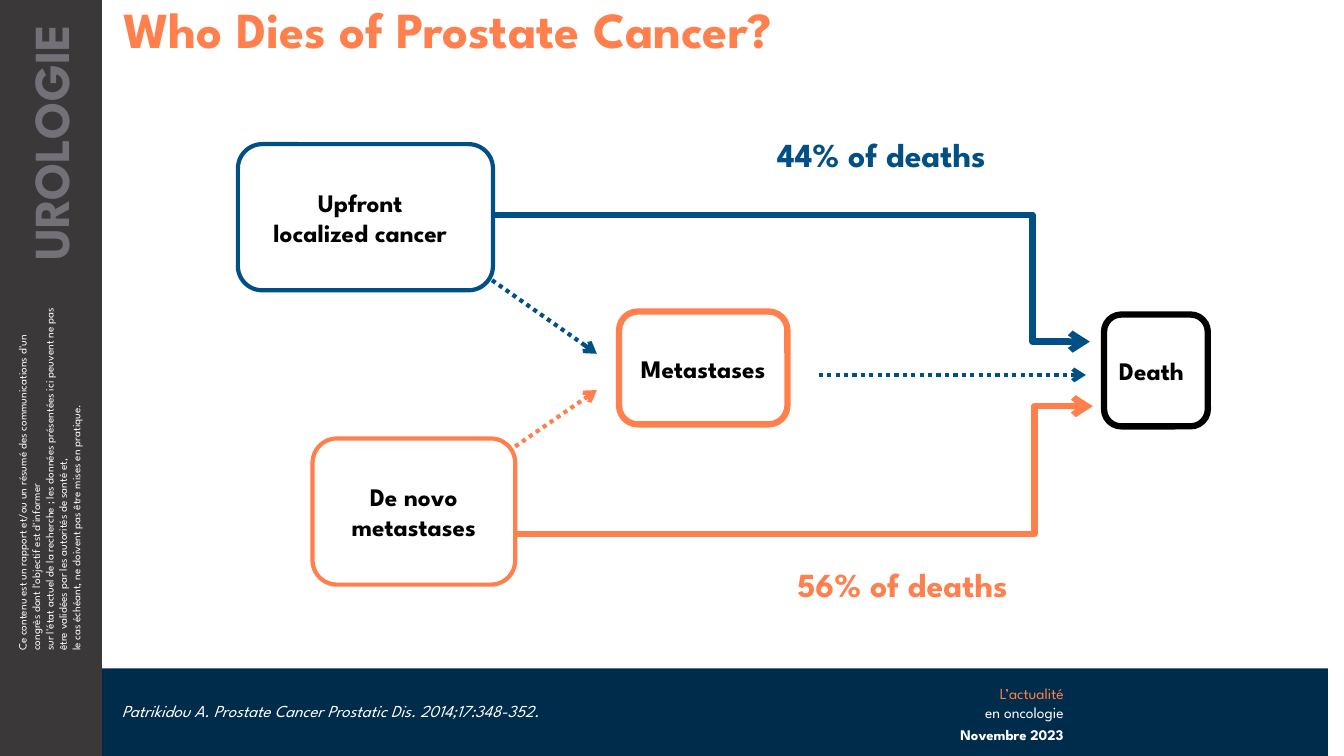
from lxml import etree
from pptx import Presentation
from pptx import util as u
from pptx.dml.color import RGBColor
from pptx.enum import dml, shapes, text
from pptx.oxml.ns import qn

NAVY, SLATE, BLUE, ORANGE = "002C4C", "3A3839", "005086", "FF7F4D"
WHITE, BLACK, GREY = "FFFFFF", "000000", "737078"
LEFT, CENTER, RIGHT = text.PP_ALIGN.LEFT, text.PP_ALIGN.CENTER, text.PP_ALIGN.RIGHT
TOP, MIDDLE = text.MSO_ANCHOR.TOP, text.MSO_ANCHOR.MIDDLE


def color(value):
    return RGBColor.from_string(value)


class Board:
    font = "League Spartan"
    cell = u.Inches(0.1)

    def __init__(self, slide):
        self.slide = slide

    def grid(self, *cells):
        return [round(c * self.cell) for c in cells]

    def wording(self, shape, lines, size, align=LEFT, anchor=TOP, insets=(1, 1), wrap=True,
                spacing=1.0, **style):
        frame = shape.text_frame
        left, right = self.grid(*insets)
        layout = {"word_wrap": wrap, "vertical_anchor": anchor, "margin_left": left,
                  "margin_right": right, "auto_size": text.MSO_AUTO_SIZE.NONE}
        for name, value in layout.items():
            setattr(frame, name, value)
        for i, (words, ink) in enumerate(lines):
            paragraph = frame.paragraphs[0] if i == 0 else frame.add_paragraph()
            paragraph.alignment = align
            paragraph.line_spacing = spacing
            run = paragraph.add_run()
            run.text = words
            for name, value in {"name": self.font, "size": u.Pt(size), **style}.items():
                setattr(run.font, name, value)
            run.font.color.rgb = color(ink)

    def label(self, at, lines, size, turn=0, **style):
        box = self.slide.shapes.add_textbox(*self.grid(*at))
        box.rotation = turn
        self.wording(box, lines, size, **style)

    def band(self, at, fill):
        band = self.slide.shapes.add_shape(shapes.MSO_SHAPE.RECTANGLE, *self.grid(*at))
        band.shadow.inherit = False
        band.fill.solid()
        band.fill.fore_color.rgb = color(fill)
        band.line.fill.background()

    def stage(self, at, lines, outline, width, **style):
        box = self.slide.shapes.add_shape(shapes.MSO_SHAPE.ROUNDED_RECTANGLE, *self.grid(*at))
        box.shadow.inherit = False
        box.fill.solid()
        box.fill.fore_color.rgb = color(WHITE)
        box.line.color.rgb = color(outline)
        box.line.width = u.Pt(width)
        self.wording(box, [(line, BLACK) for line in lines], 18,
                     **{"align": CENTER, "anchor": MIDDLE, "bold": True, **style})

    def arrowed(self, route, ink, width):
        route.line.color.rgb = color(ink)
        route.line.width = u.Pt(width)
        outline = route._element.spPr.find(qn("a:ln"))
        etree.SubElement(outline, qn("a:tailEnd"), type="arrow")

    def dotted(self, start, end, ink):
        arrow = self.slide.shapes.add_connector(shapes.MSO_CONNECTOR.STRAIGHT,
                                                *self.grid(*start, *end))
        arrow.line.dash_style = dml.MSO_LINE.ROUND_DOT
        self.arrowed(arrow, ink, 3)
        etree.SubElement(arrow._element.spPr, qn("a:effectLst"))

    def elbow(self, start, bend, end, ink):
        corners = [(bend, start[1]), (bend, end[1]), end]
        builder = self.slide.shapes.build_freeform(*self.grid(*start))
        builder.add_line_segments([self.grid(*corner) for corner in corners], close=False)
        route = builder.convert_to_shape()
        route.shadow.inherit = False
        route.fill.background()
        self.arrowed(route, ink, 4.5)


def main():
    deck = Presentation()
    deck.slide_width, deck.slide_height = u.Inches(13.33), u.Inches(7.5)
    board = Board(deck.slides.add_slide(deck.slide_layouts[6]))

    board.band((8.5, 66.3, 123.2, 8.7), NAVY)
    board.band((0, 0, 10.1, 75), SLATE)
    disclaimer = ("Ce contenu est un rapport et/ou un résumé des communications d'un congrès "
                  "dont l'objectif est d'informer",
                  "sur l'état actuel de la recherche ; les données présentées ici peuvent ne pas "
                  "être validées par les autorités de santé et,",
                  "le cas échéant, ne doivent pas être mises en pratique.")
    board.label((-13.1, 43.7, 36, 7.7), [(part, WHITE) for part in disclaimer], 8, turn=270)
    board.label((-10.4, 11.8, 30.7, 7.1), [("UROLOGIE", GREY)], 36, turn=270,
                align=RIGHT, insets=(1, 2.4), bold=True)
    board.label((90.1, 67.4, 16.4, 4.7), [("L’actualité", ORANGE), ("en oncologie", WHITE)], 11,
                align=RIGHT)
    board.label((90.1, 71.7, 15.4, 2.7), [("Novembre 2023", WHITE)], 10.5,
                align=RIGHT, insets=(1, 0), spacing=0.9, bold=True)
    citation = "Patrikidou A. Prostate Cancer Prostatic Dis. 2014;17:348-352."
    board.label((11.1, 66.3, 56.4, 8.7), [(citation, WHITE)], 12,
                anchor=MIDDLE, spacing=0.9, italic=True)
    board.label((10.2, 0, 123.1, 5.7), [("Who Dies of Prostate Cancer?", ORANGE)], 36,
                insets=(2, 1), spacing=0.9, bold=True)

    board.stage((61.4, 30.9, 16.7, 11.2), ["Metastases"], ORANGE, 4.5)
    board.stage((23.6, 14.3, 25.3, 14.5), ["Upfront", "localized cancer"], BLUE, 3,
                insets=(1, 2))
    board.stage((109.5, 31.2, 10.3, 11.1), ["Death"], BLACK, 4.5, align=LEFT)

    board.dotted((48.8, 27.8), (59.2, 35.1), BLUE)
    board.dotted((51.1, 44.3), (59.2, 38.7), ORANGE)
    board.dotted((81.2, 37.2), (107.7, 37.2), BLUE)
    board.elbow((49.1, 53), 102.6, (108.4, 40.3), ORANGE)
    board.elbow((48.8, 21.3), 102.4, (108.1, 33.9), BLUE)
    for share, at, ink in (("56%", (78.1, 55.5, 24.8, 5), ORANGE),
                           ("44%", (76.1, 12.8, 24.8, 5), BLUE)):
        board.label(at, [(f"{share} of deaths", ink)], 24, wrap=False, bold=True)

    board.stage((31, 43.5, 20.1, 14.5), ["De novo", "metastases"], ORANGE, 3)
    deck.save("out.pptx")


if __name__ == "__main__":
    main()
